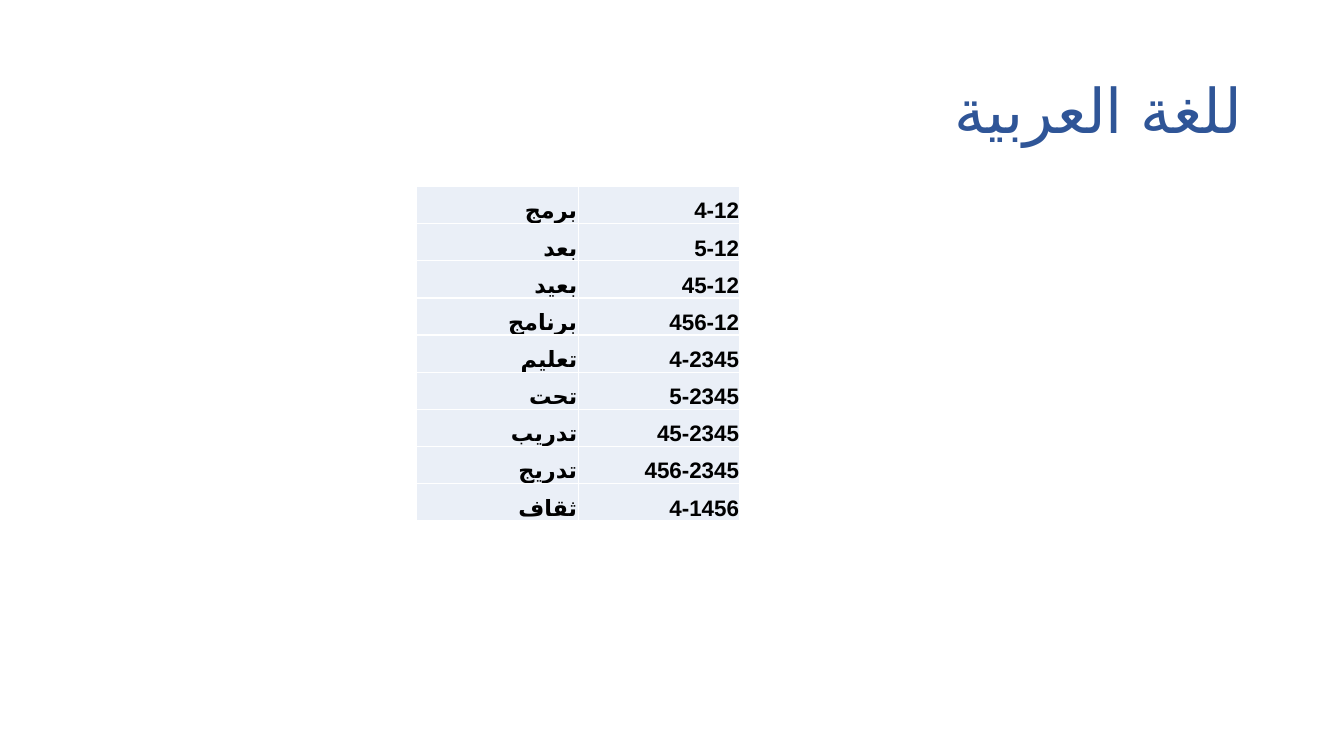
"""Build a slide with an Arabic title and a two-column table of words and codes."""
from lxml import etree
from pptx import Presentation
from pptx.dml.color import RGBColor
from pptx.enum.text import MSO_ANCHOR as Anchor, PP_ALIGN as Align
from pptx.oxml.ns import qn
from pptx.util import Inches, Pt

TITLE = "للغة العربية"
ROWS = [
    ("برمج", "4-12"),
    ("بعد", "5-12"),
    ("بعيد", "45-12"),
    ("برنامج", "456-12"),
    ("تعليم", "4-2345"),
    ("تحت", "5-2345"),
    ("تدريب", "45-2345"),
    ("تدريج", "456-2345"),
    ("ثقاف", "4-1456"),
]
TITLE_BOX = (0.92, 0.4, 11.5, 1.45)
TABLE_BOX = (4.13, 1.85, 3.21, 3.32)
TITLE_FONT = {"name": "Calibri", "size": Pt(44), "bold": False}
CELL_FONT = {"name": "Calibri", "size": Pt(16), "bold": True}
CELL_FORMAT = {
    "vertical_anchor": Anchor.BOTTOM,
    "margin_left": Inches(0.01),
    "margin_right": Inches(0.01),
    "margin_top": Inches(0.01),
    "margin_bottom": 0,
}
TITLE_COLOUR, TEXT_COLOUR = "2F5597", "000000"
CELL_COLOUR, BORDER_COLOUR = "EAEFF7", "FFFFFF"


def paint(colour_format, value):
    colour_format.rgb = RGBColor.from_string(value)


def apply(target, values):
    for name, value in values.items():
        setattr(target, name, value)


def write(text_frame, text, font, colour):
    paragraph = text_frame.paragraphs[0]
    paragraph.alignment = Align.RIGHT
    paragraph._p.get_or_add_pPr().set("rtl", "1")
    run = paragraph.add_run()
    run.text = text
    apply(run.font, font)
    paint(run.font.color, colour)
    properties = run._r.get_or_add_rPr()
    properties.set("lang", "ar-SA")
    etree.SubElement(properties, qn("a:cs"), typeface="Arial")
    return paragraph


def add_borders(cell):
    properties = cell._tc.get_or_add_tcPr()
    for position, side in enumerate(("lnL", "lnR", "lnT", "lnB")):
        line = etree.Element(qn(f"a:{side}"), w=str(Pt(1)))
        fill = etree.SubElement(line, qn("a:solidFill"))
        etree.SubElement(fill, qn("a:srgbClr"), val=BORDER_COLOUR)
        properties.insert(position, line)


def add_title(slide):
    frame = slide.shapes.add_textbox(*map(Inches, TITLE_BOX)).text_frame
    apply(frame, {"word_wrap": True, "vertical_anchor": Anchor.MIDDLE})
    write(frame, TITLE, TITLE_FONT, TITLE_COLOUR).line_spacing = 0.9


def add_word_table(slide):
    frame = slide.shapes.add_table(len(ROWS), len(ROWS[0]), *map(Inches, TABLE_BOX))
    table = frame.table
    apply(table, {"first_row": False, "horz_banding": False})
    for row, texts in enumerate(ROWS):
        for column, text in enumerate(texts):
            cell = table.cell(row, column)
            apply(cell, CELL_FORMAT)
            cell.fill.solid()
            paint(cell.fill.fore_color, CELL_COLOUR)
            add_borders(cell)
            write(cell.text_frame, text, CELL_FONT, TEXT_COLOUR)


def main():
    presentation = Presentation()
    apply(presentation, {"slide_width": Inches(13.33), "slide_height": Inches(7.5)})
    slide = presentation.slides.add_slide(presentation.slide_layouts[6])
    add_title(slide)
    add_word_table(slide)
    presentation.save("out.pptx")


if __name__ == "__main__":
    main()
